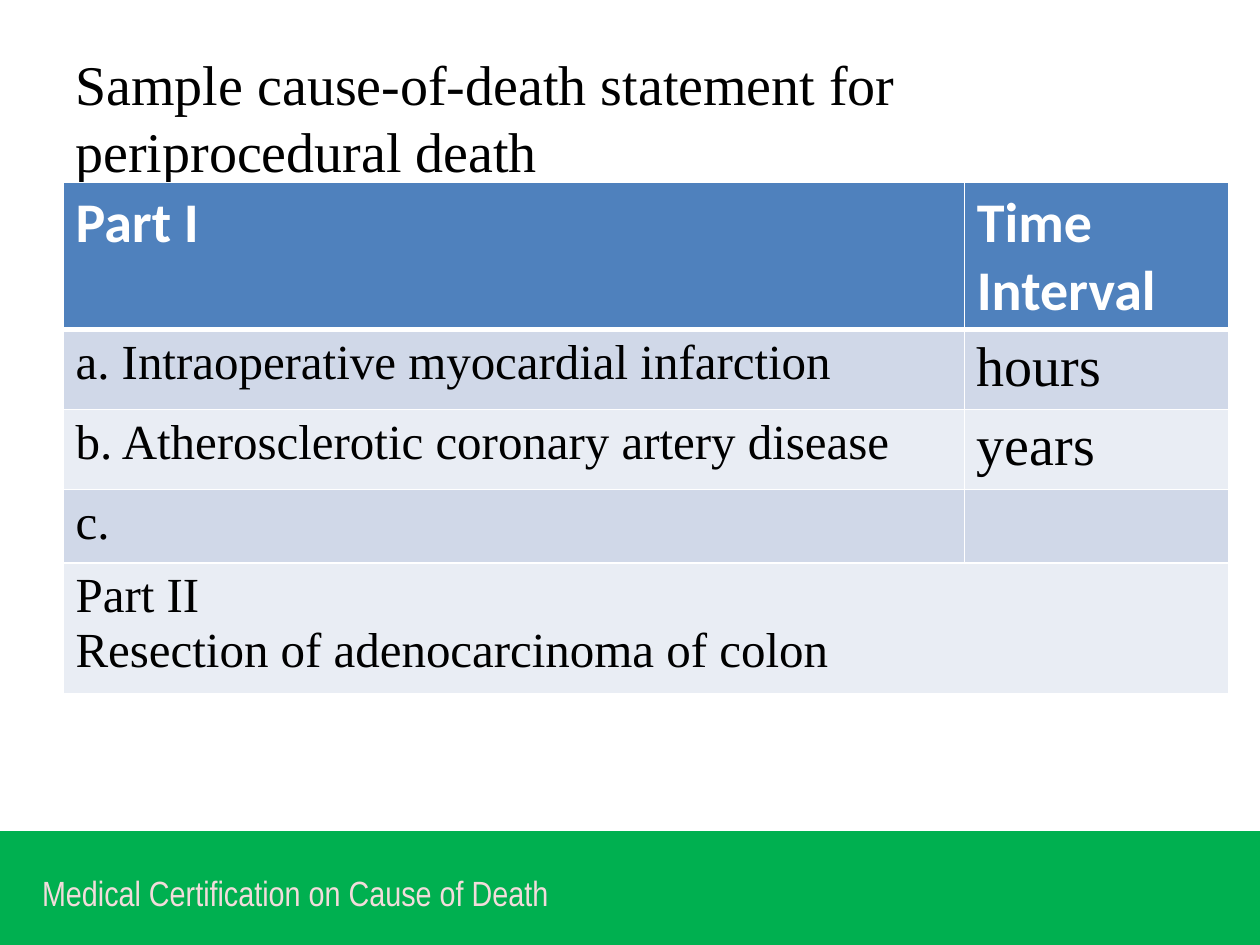
from pptx import Presentation
from pptx.dml.color import RGBColor
from pptx.enum.shapes import MSO_SHAPE
from pptx.enum.text import MSO_ANCHOR
from pptx.oxml import parse_xml
from pptx.oxml.ns import nsdecls
from pptx.util import Pt

GREEN = RGBColor(0x00, 0xB0, 0x50)
PINK = RGBColor(0xF2, 0xDC, 0xDB)
BLUE = RGBColor(0x4F, 0x81, 0xBD)
BAND_DARK = RGBColor(0xD0, 0xD8, 0xE8)
BAND_LIGHT = RGBColor(0xE9, 0xED, 0xF4)
WHITE = RGBColor(0xFF, 0xFF, 0xFF)
BLACK = RGBColor(0x00, 0x00, 0x00)

COLUMN_WIDTHS = (515, 151)
ROW_HEIGHTS = (76, 45.5, 42, 42, 62.5)
HEADINGS = ("Part I", "Time Interval")
CAUSES = (
    ("a. Intraoperative myocardial infarction", "hours"),
    ("b. Atherosclerotic coronary artery disease", "years"),
    ("c.", ""),
)
PART_TWO = "Part II\nResection of adenocarcinoma of colon"


def write(frame, text, size=28, font="Times New Roman", color=BLACK, bold=False):
    """Fill a text frame, one paragraph for each line of text."""
    frame.word_wrap = True
    for index, line in enumerate(text.split("\n")):
        para = frame.paragraphs[0] if index == 0 else frame.add_paragraph()
        para.font.size = Pt(size)
        if line:
            span = para.add_run()
            span.text = line
            span.font.name = font
            span.font.size = Pt(size)
            span.font.bold = bold
            span.font.color.rgb = color


def add_label(page, left, top, width, height, text, margins=True, **text_format):
    box = page.shapes.add_textbox(Pt(left), Pt(top), Pt(width), Pt(height))
    frame = box.text_frame
    frame.vertical_anchor = MSO_ANCHOR.MIDDLE
    if not margins:
        frame.margin_left = frame.margin_right = 0
        frame.margin_top = frame.margin_bottom = 0
    write(frame, text, **text_format)


def add_footer(page, left, top, width, height):
    band = page.shapes.add_shape(
        MSO_SHAPE.RECTANGLE, Pt(left), Pt(top), Pt(width), Pt(height))
    band.shadow.inherit = False
    band.fill.solid()
    band.fill.fore_color.rgb = GREEN
    band.line.fill.background()
    add_label(page, left + 24, top + 18, 372, 34,
              "Medical Certification on Cause of Death", margins=False,
              size=20, font="Arial Narrow", color=PINK)


def style_cell(cell, fill, bottom=1, top=1):
    """Draw white borders, then the fill."""
    properties = cell._tc.get_or_add_tcPr()
    for side, weight in (("L", 1), ("R", 1), ("T", top), ("B", bottom)):
        properties.append(parse_xml(
            f'<a:ln{side} {nsdecls("a")} w="{Pt(weight)}"><a:solidFill>'
            f'<a:srgbClr val="{WHITE}"/></a:solidFill></a:ln{side}>'))
    cell.fill.solid()
    cell.fill.fore_color.rgb = fill


def add_cause_table(page, left, top):
    table = page.shapes.add_table(
        len(ROW_HEIGHTS), len(COLUMN_WIDTHS), Pt(left), Pt(top),
        Pt(sum(COLUMN_WIDTHS)), Pt(sum(ROW_HEIGHTS))).table
    for column, width in zip(table.columns, COLUMN_WIDTHS):
        column.width = Pt(width)
    for row, height in zip(table.rows, ROW_HEIGHTS):
        row.height = Pt(height)

    # Heading row
    for column, heading in enumerate(HEADINGS):
        cell = table.cell(0, column)
        style_cell(cell, BLUE, bottom=3)
        write(cell.text_frame, heading, size=32, font="Calibri",
              color=WHITE, bold=True)

    # Part I causes, then the merged Part II row
    for row, texts in enumerate((*CAUSES, (PART_TWO, "")), start=1):
        for column, text in enumerate(texts):
            cell = table.cell(row, column)
            style_cell(cell, BAND_DARK if row % 2 else BAND_LIGHT,
                       top=3 if row == 1 else 1)
            write(cell.text_frame, text, size=32 if column and text else 28)
    last = len(ROW_HEIGHTS) - 1
    table.cell(last, 0).merge(table.cell(last, 1))


def main():
    deck = Presentation()
    deck.slide_width, deck.slide_height = Pt(720), Pt(540)
    page = deck.slides.add_slide(deck.slide_layouts[6])
    add_footer(page, 0, 475, 720, 66)
    add_label(page, 36, 21.6, 666, 90,
              "Sample cause-of-death statement for periprocedural death", size=32)
    add_cause_table(page, 36, 104.4)
    deck.save("out.pptx")


if __name__ == "__main__":
    main()
